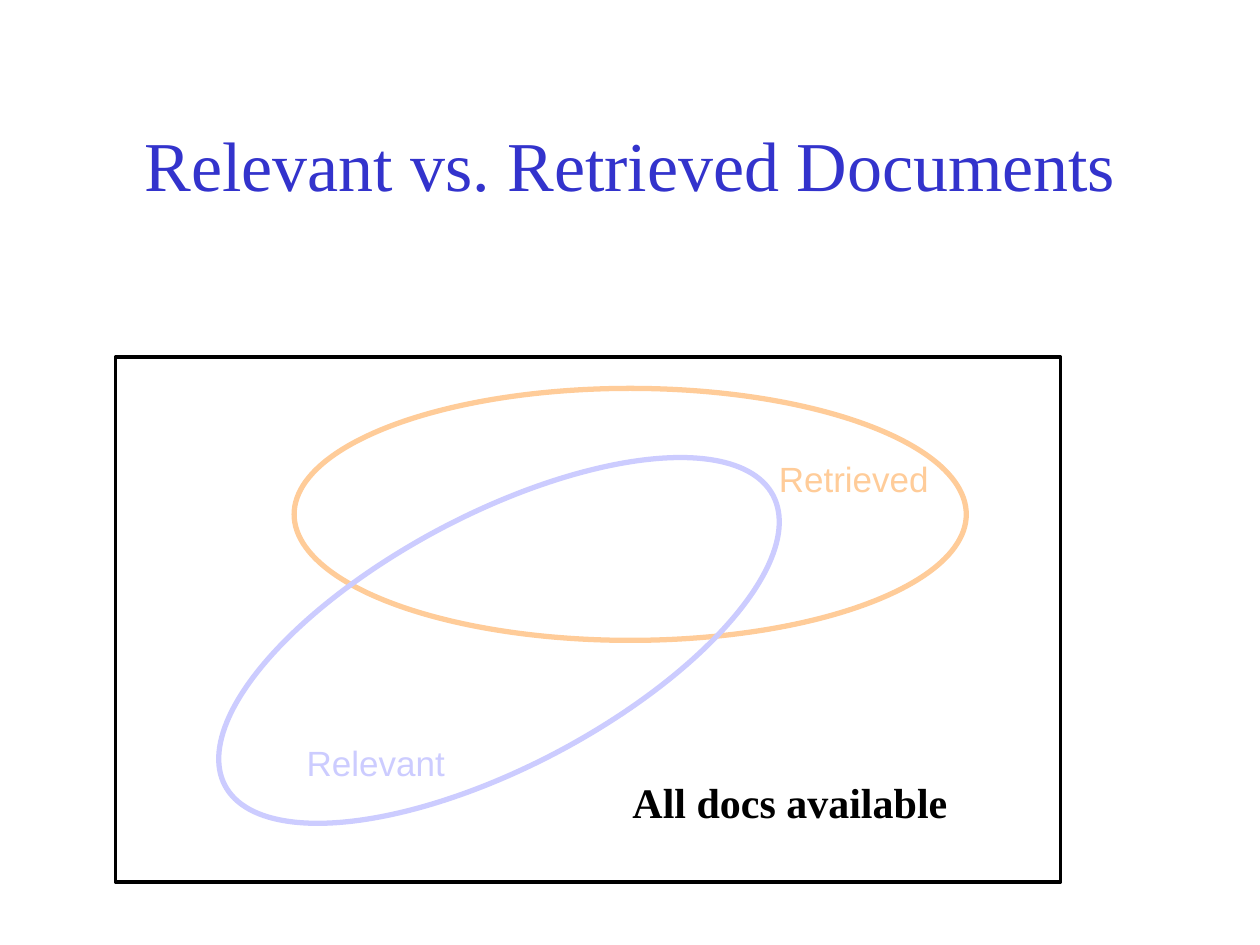
from dataclasses import dataclass

import pptx
import pptx.dml.color
import pptx.enum.shapes
import pptx.enum.text
import pptx.util

Cm = pptx.util.Cm
Shape = pptx.enum.shapes.MSO_SHAPE


@dataclass(frozen=True)
class Theme:
    title_color: str = "3333CC"
    retrieved: str = "FFCC99"
    relevant: str = "CCCCFF"
    all_docs: str = "000000"
    serif: str = "Times New Roman"
    sans: str = "Arial"
    title_size: int = 40
    set_size: int = 20
    all_docs_size: int = 24
    set_line: float = 3
    frame_line: float = 2.25


THEME = Theme()


def rgb(color):
    return pptx.dml.color.RGBColor.from_string(color)


def place(element, box):
    """Set left, top, width and height, given in centimetres."""
    element.left, element.top, element.width, element.height = map(Cm, box)


def style_text(paragraph, font_name, size, color, bold=False):
    font = paragraph.font
    font.name = font_name
    font.size = pptx.util.Pt(size)
    font.color.rgb = rgb(color)
    font.bold = bold


def add_title(slide, text):
    title = slide.shapes.title
    place(title, (1.9, 1.7, 21.6, 3.18))
    title.text_frame.text = text
    title.text_frame.vertical_anchor = pptx.enum.text.MSO_ANCHOR.MIDDLE
    paragraph = title.text_frame.paragraphs[0]
    paragraph.alignment = pptx.enum.text.PP_ALIGN.CENTER
    style_text(paragraph, THEME.serif, THEME.title_size, THEME.title_color)


def add_outline(slide, kind, box, color, line_width, rotation=0):
    outline = slide.shapes.add_shape(kind, *map(Cm, box))
    outline.rotation = rotation
    outline.shadow.inherit = False
    outline.fill.background()
    outline.line.color.rgb = rgb(color)
    outline.line.width = pptx.util.Pt(line_width)


def add_label(slide, text, box, font_name, size, color, bold=False, wrap=False):
    label = slide.shapes.add_textbox(*map(Cm, box))
    frame = label.text_frame
    frame.word_wrap = wrap
    frame.auto_size = pptx.enum.text.MSO_AUTO_SIZE.SHAPE_TO_FIT_TEXT
    frame.text = text
    style_text(frame.paragraphs[0], font_name, size, color, bold)


def main():
    deck = pptx.Presentation()
    deck.slide_width, deck.slide_height = Cm(25.4), Cm(19.05)
    slide = deck.slides.add_slide(deck.slide_layouts.get_by_name("Title Only"))

    add_title(slide, "Relevant vs. Retrieved Documents")
    add_outline(slide, Shape.OVAL, (5.93, 7.83, 13.55, 5.08),
                THEME.retrieved, THEME.set_line)
    add_outline(slide, Shape.OVAL, (3.81, 10.37, 12.5, 5.08),
                THEME.relevant, THEME.set_line, rotation=332.1)
    add_label(slide, "Relevant", (5.93, 14.82, 3.3, 1.1),
              THEME.sans, THEME.set_size, THEME.relevant)
    add_label(slide, "Retrieved", (15.45, 9.1, 4.4, 1.1),
              THEME.sans, THEME.set_size, THEME.retrieved, wrap=True)
    add_outline(slide, Shape.RECTANGLE, (2.33, 7.2, 19.05, 10.58),
                THEME.all_docs, THEME.frame_line)
    add_label(slide, "All docs available", (12.5, 15.52, 6.86, 1.27),
              THEME.serif, THEME.all_docs_size, THEME.all_docs, bold=True)

    deck.save("out.pptx")


if __name__ == "__main__":
    main()
